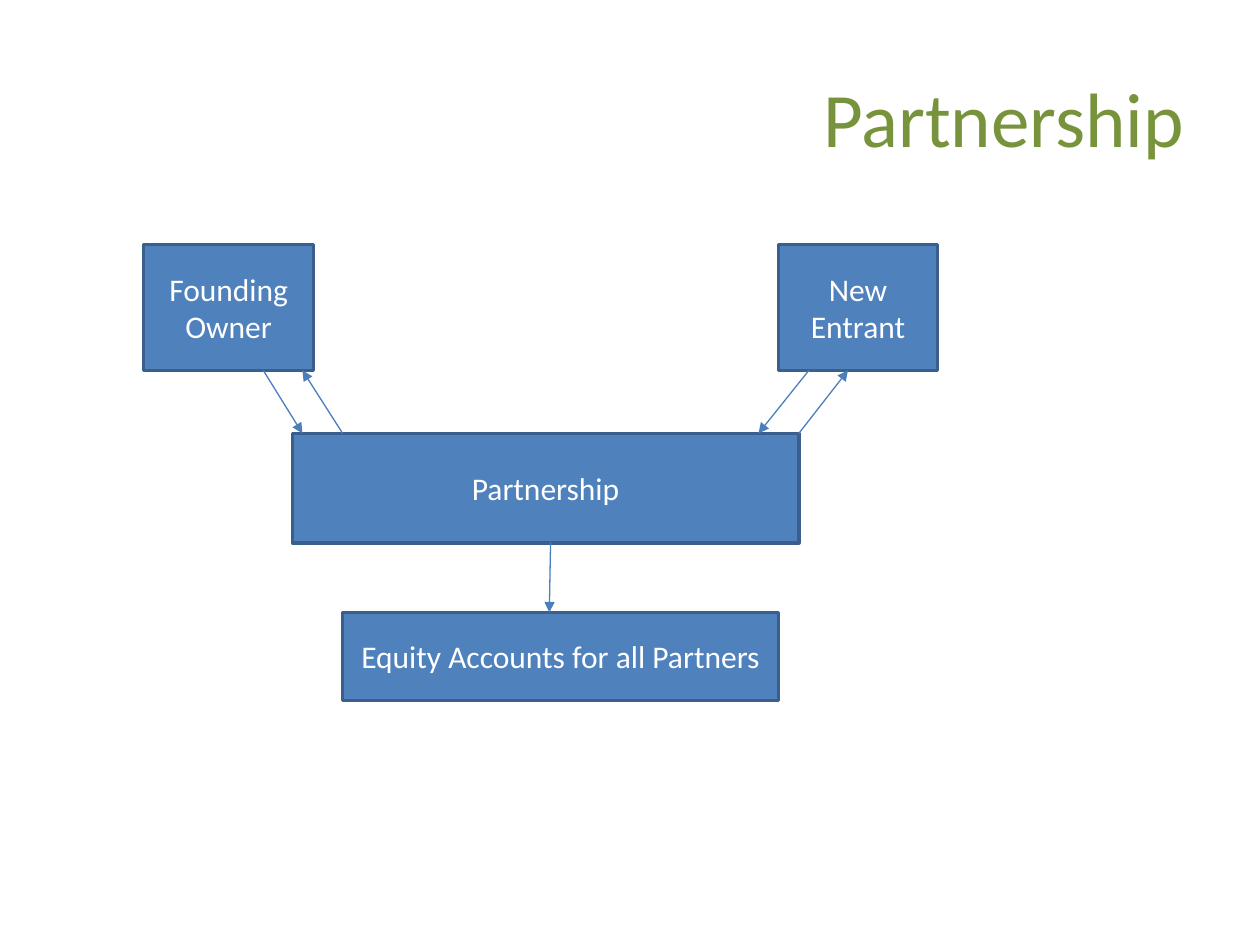
from dataclasses import dataclass

from lxml import etree
from pptx import Presentation
from pptx.dml.color import RGBColor
from pptx.enum import shapes, text
from pptx.oxml import ns
from pptx.util import Inches, Pt


@dataclass(frozen=True)
class Theme:
    font: str = "Calibri"
    title: str = "77933C"
    fill: str = "4F81BD"
    edge: str = "3A5F8C"
    arrow: str = "4B7EBC"
    label: str = "FFFFFF"
    head: float = 44
    body: float = 18
    border: float = 2
    thin: float = 0.75


@dataclass(frozen=True)
class Box:
    label: str
    left: float
    top: float
    width: float
    height: float


@dataclass(frozen=True)
class Arrow:
    x1: float
    y1: float
    x2: float
    y2: float


THEME = Theme()
OWNER_TOP, OWNER_END = 1.94, 2.94
FIRM_TOP, FIRM_END = 3.44, 4.3
EQUITY_TOP = 4.86

BOXES = [
    Box("Founding Owner", 1.14, OWNER_TOP, 1.35, 1),
    Box("New Entrant", 6.18, OWNER_TOP, 1.26, 1),
    Box("Partnership", 2.32, FIRM_TOP, 4.02, 0.87),
    Box("Equity Accounts for all Partners", 2.72, EQUITY_TOP, 3.46, 0.7),
]
ARROWS = [
    Arrow(6.42, OWNER_END, 6.02, FIRM_TOP),
    Arrow(6.34, FIRM_TOP, 6.73, OWNER_END),
    Arrow(2.72, FIRM_TOP, 2.4, OWNER_END),
    Arrow(2.09, OWNER_END, 2.4, FIRM_TOP),
    Arrow(4.37, FIRM_END, 4.36, EQUITY_TOP),
]


def write(shape, words: str, *, size: float, color: str, align) -> None:
    frame = shape.text_frame
    frame.word_wrap = True
    frame.vertical_anchor = text.MSO_ANCHOR.MIDDLE
    para = frame.paragraphs[0]
    para.alignment = align
    run = para.add_run()
    run.text = words
    run.font.name = THEME.font
    run.font.size = Pt(size)
    run.font.color.rgb = RGBColor.from_string(color)


def place(shape, left: float, top: float, width: float, height: float) -> None:
    shape.left, shape.top = Inches(left), Inches(top)
    shape.width, shape.height = Inches(width), Inches(height)


def stroke(line, color: str, width: float) -> None:
    line.color.rgb = RGBColor.from_string(color)
    line.width = Pt(width)


def draw_box(slide, box: Box) -> None:
    shape = slide.shapes.add_shape(
        shapes.MSO_SHAPE.RECTANGLE,
        Inches(box.left), Inches(box.top), Inches(box.width), Inches(box.height),
    )
    shape.shadow.inherit = False
    shape.fill.solid()
    shape.fill.fore_color.rgb = RGBColor.from_string(THEME.fill)
    stroke(shape.line, THEME.edge, THEME.border)
    write(shape, box.label, size=THEME.body, color=THEME.label,
          align=text.PP_ALIGN.CENTER)


def draw_arrow(slide, arrow: Arrow) -> None:
    link = slide.shapes.add_connector(
        shapes.MSO_CONNECTOR.STRAIGHT,
        Inches(arrow.x1), Inches(arrow.y1), Inches(arrow.x2), Inches(arrow.y2),
    )
    stroke(link.line, THEME.arrow, THEME.thin)
    props = link._element.spPr
    etree.SubElement(props.find(ns.qn("a:ln")), ns.qn("a:tailEnd"), type="triangle")
    etree.SubElement(props, ns.qn("a:effectLst"))


def main() -> None:
    deck = Presentation()
    deck.slide_width, deck.slide_height = Inches(10), Inches(7.5)
    slide = deck.slides.add_slide(deck.slide_layouts[5])
    title = slide.shapes.title
    place(title, 0.5, 0.3, 9, 1.25)
    write(title, "Partnership", size=THEME.head, color=THEME.title,
          align=text.PP_ALIGN.RIGHT)
    for box in BOXES:
        draw_box(slide, box)
    for arrow in ARROWS:
        draw_arrow(slide, arrow)
    deck.save("out.pptx")


if __name__ == "__main__":
    main()
